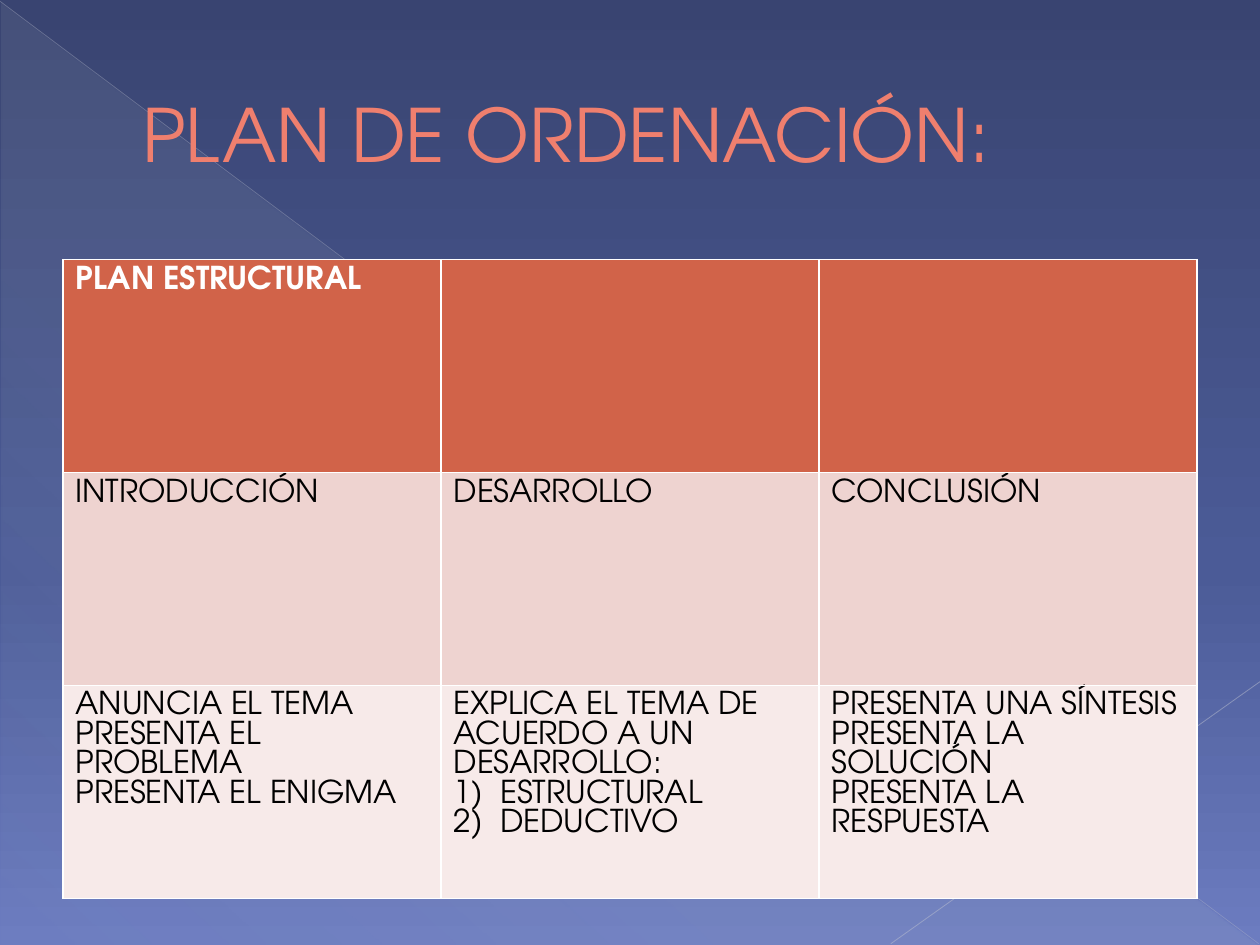
import pptx
import pptx.dml.color
import pptx.enum.shapes
import pptx.enum.text
import pptx.oxml
import pptx.oxml.ns
import pptx.util
from lxml import etree

TITLE = "PLAN DE ORDENACIÓN:"
ROWS = [
    [["PLAN ESTRUCTURAL"], [], []],
    [["INTRODUCCIÓN"], ["DESARROLLO"], ["CONCLUSIÓN"]],
    [
        ["ANUNCIA EL TEMA", "PRESENTA EL PROBLEMA", "PRESENTA EL ENIGMA"],
        ["EXPLICA EL TEMA DE ACUERDO A UN DESARROLLO:",
         "1)\tESTRUCTURAL", "2)\tDEDUCTIVO"],
        ["PRESENTA UNA SÍNTESIS", "PRESENTA LA SOLUCIÓN",
         "PRESENTA LA RESPUESTA"],
    ],
]
ROW_STYLES = [("D16349", "FFFFFF", True), ("EED3D0", "000000", False),
              ("F7EAE9", "000000", False)]  # fill, text, bold
FONT = "TeX Gyre Adventor"

# position %, colour, opacity %
BACKGROUND = [(0, "394471", 100), (60, "4B5B97", 100), (100, "6C7CC0", 100)]
SHEEN = [(0, "C5D1D7", 10), (70, "C5D1D7", 8), (100, "C5D1D7", 1)]
# start, end, colour, width, opacity %
RAYS = [((0, 0.01), (9.99, 7.49), "BABECD", 0.39, 35),
        ((10, 5.41), (7.07, 7.49), "C2C5D2", 0.47, 45)]

WIDTH, HEIGHT = 10, 7.5
MARGIN = WIDTH * 0.05
TABLE_TOP, TABLE_HEIGHT = 2.06, 5.07
TITLE_INDENT, NUMBER_INDENT = 0.53, 0.37

inches = pptx.util.Inches
qn = pptx.oxml.ns.qn


def rgb(value):
    return pptx.dml.color.RGBColor.from_string(value)


def add_alpha(colour, opacity):
    etree.SubElement(colour, qn("a:alpha"), val=str(opacity * 1000))


def set_gradient(fill, owner, stops, clockwise_angle):
    fill.gradient()
    fill.gradient_angle = 360 - clockwise_angle
    stop_list = owner.find(".//" + qn("a:gsLst"))
    for old in list(stop_list):
        stop_list.remove(old)
    for position, value, opacity in stops:
        stop = etree.SubElement(stop_list, qn("a:gs"), pos=str(position * 1000))
        colour = etree.SubElement(stop, qn("a:srgbClr"), val=value)
        if opacity < 100:
            add_alpha(colour, opacity)


def set_font(font, size, colour, bold=False):
    font.name, font.size, font.bold = FONT, pptx.util.Pt(size), bold
    font.color.rgb = rgb(colour)


def set_indent(paragraph, left, first_line=0):
    properties = paragraph._p.get_or_add_pPr()
    properties.set("marL", str(inches(left)))
    properties.set("indent", str(inches(first_line)))


def add_backdrop(slide):
    set_gradient(slide.background.fill, slide.element, BACKGROUND, 90)
    sheen = slide.shapes.add_shape(
        pptx.enum.shapes.MSO_SHAPE.RIGHT_TRIANGLE,
        inches(0.01), inches(0.02), inches(9.98), inches(7.48))
    sheen.shadow.inherit = False
    sheen.line.fill.background()
    set_gradient(sheen.fill, sheen.element, SHEEN, 133)
    for start, end, colour, width, opacity in RAYS:
        ray = slide.shapes.add_connector(
            pptx.enum.shapes.MSO_CONNECTOR.STRAIGHT,
            *map(inches, start + end))
        ray.line.width = pptx.util.Pt(width)
        ray.line.color.rgb = rgb(colour)
        properties = ray.element.spPr
        add_alpha(properties.find(".//" + qn("a:srgbClr")), opacity)
        etree.SubElement(properties, qn("a:effectLst"))


def add_title(slide):
    title = slide.shapes.add_textbox(
        inches(MARGIN), inches(0.29), inches(WIDTH - 2 * MARGIN), inches(1.53))
    frame = title.text_frame
    frame.word_wrap = True
    frame.vertical_anchor = pptx.enum.text.MSO_ANCHOR.MIDDLE
    paragraph = frame.paragraphs[0]
    set_indent(paragraph, TITLE_INDENT)
    run = paragraph.add_run()
    run.text = TITLE
    set_font(run.font, 42, "EF7F6E")
    outline = etree.Element(qn("a:ln"), w=str(pptx.util.Pt(0.5)))
    fill = etree.SubElement(outline, qn("a:solidFill"))
    etree.SubElement(fill, qn("a:srgbClr"), val="914533")
    run.font._element.insert(0, outline)


def add_plan(slide):
    """Add the table; its default style draws the white borders."""
    plan = slide.shapes.add_table(
        len(ROWS), len(ROWS[0]), inches(MARGIN), inches(TABLE_TOP),
        inches(WIDTH - 2 * MARGIN), inches(TABLE_HEIGHT)).table
    for r, (row, (fill, colour, bold)) in enumerate(zip(ROWS, ROW_STYLES)):
        for c, lines in enumerate(row):
            cell = plan.cell(r, c)
            cell.fill.solid()
            cell.fill.fore_color.rgb = rgb(fill)
            cell.text = "\n".join(lines)
            for paragraph in cell.text_frame.paragraphs:
                set_font(paragraph.font, 18, colour, bold)
                if "\t" in paragraph.text:
                    set_indent(paragraph, NUMBER_INDENT, -NUMBER_INDENT)


def main():
    deck = pptx.Presentation()
    deck.slide_width, deck.slide_height = inches(WIDTH), inches(HEIGHT)
    slide = deck.slides.add_slide(deck.slide_layouts[6])
    add_backdrop(slide)
    add_title(slide)
    add_plan(slide)
    deck.save("out.pptx")


if __name__ == "__main__":
    main()
